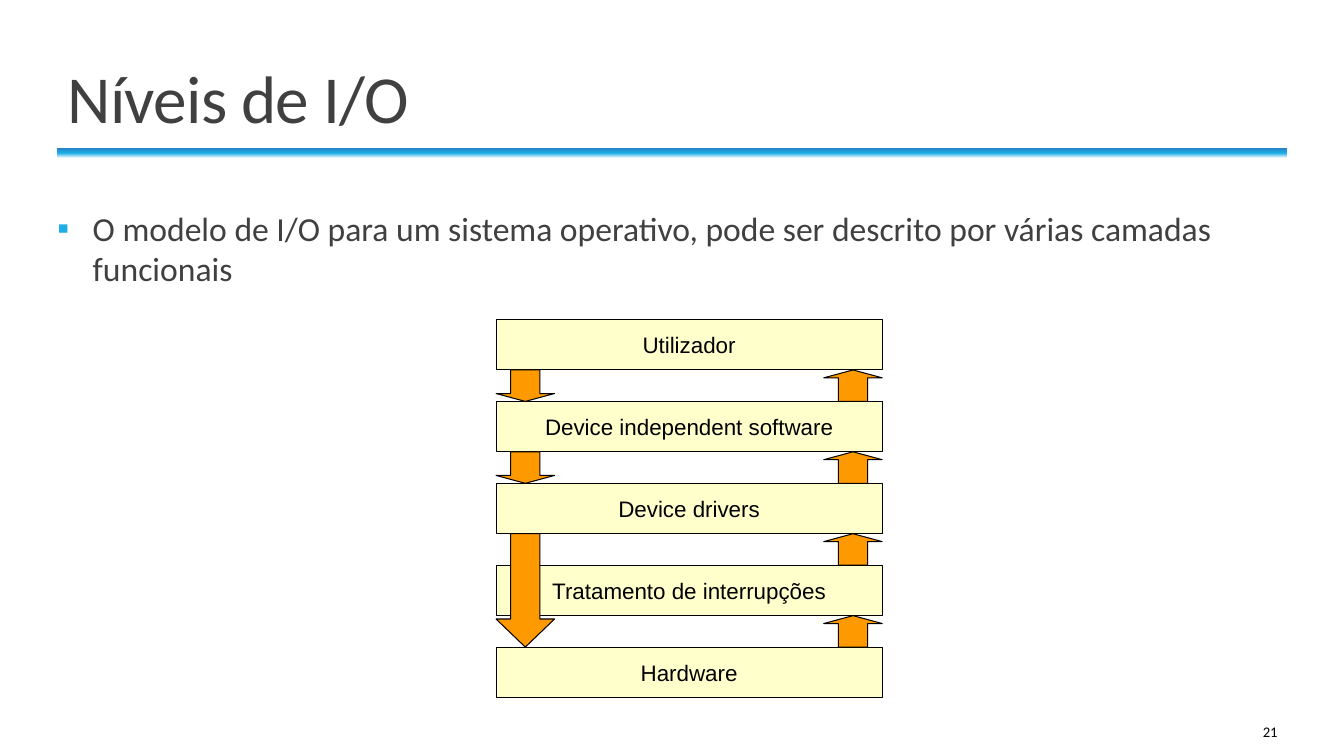
from lxml import etree
from pptx import Presentation
from pptx.dml.color import RGBColor
from pptx.enum.shapes import MSO_SHAPE
from pptx.enum.text import MSO_ANCHOR, PP_ALIGN
from pptx.oxml import parse_xml
from pptx.oxml.ns import nsdecls, qn
from pptx.util import Inches, Pt

RECTANGLE, DOWN_ARROW = MSO_SHAPE.RECTANGLE, MSO_SHAPE.DOWN_ARROW
TOP, MIDDLE, BOTTOM = MSO_ANCHOR.TOP, MSO_ANCHOR.MIDDLE, MSO_ANCHOR.BOTTOM
LEFT, CENTER, RIGHT = PP_ALIGN.LEFT, PP_ALIGN.CENTER, PP_ALIGN.RIGHT

COLORS = {
    "text": "404040",
    "black": "000000",
    "layer": "FFFFCC",
    "arrow": "FF9900",
    "bullet": "1CADE4",
}
RULE_STOPS = ((0, "FFFFFF"), (50, "1CADE4"), (100, "2683C6"))

# Page grid
SLIDE_WIDTH, SLIDE_HEIGHT = 13.33, 7.5
MARGIN = 0.57
CONTENT_WIDTH = 12.2

# Layer stack: one row per layer, arrows in the gaps
LAYERS = (
    "Utilizador",
    "Device independent software",
    "Device drivers",
    "Tratamento de interrupções",
    "Hardware",
)
STACK_LEFT, STACK_TOP, STACK_WIDTH = 4.92, 3.17, 3.83
LAYER_HEIGHT, ROW_PITCH = 0.5, 0.8125
ARROW_WIDTH = 0.58


def color(name):
    return RGBColor.from_string(COLORS[name])


def row_top(row):
    return STACK_TOP + row * ROW_PITCH


def write(paragraph, text, size, font, color_name):
    run = paragraph.add_run()
    run.text = text
    run.font.size = Pt(size)
    run.font.name = font
    run.font.color.rgb = color(color_name)
    return run


def add_text(slide, box, text, size, color_name, anchor=TOP, align=LEFT):
    shape = slide.shapes.add_textbox(*map(Inches, box))
    frame = shape.text_frame
    frame.word_wrap = True
    frame.vertical_anchor = anchor
    paragraph = frame.paragraphs[0]
    paragraph.alignment = align
    run = write(paragraph, text, size, "Calibri", color_name)
    return frame, paragraph, run


def add_block(slide, kind, box, fill_name):
    shape = slide.shapes.add_shape(kind, *map(Inches, box))
    shape.shadow.inherit = False
    shape.fill.solid()
    shape.fill.fore_color.rgb = color(fill_name)
    shape.line.color.rgb = color("black")
    shape.line.width = Pt(0.75)
    return shape


def add_rule(slide):
    box = (MARGIN, 1.47, CONTENT_WIDTH, 0.1)
    shape = slide.shapes.add_shape(RECTANGLE, *map(Inches, box))
    shape.shadow.inherit = False
    shape.line.fill.background()
    stops = "".join(
        f'<a:gs pos="{position * 1000}"><a:srgbClr val="{value}"/></a:gs>'
        for position, value in RULE_STOPS
    )
    gradient = parse_xml(
        f'<a:gradFill {nsdecls("a")}><a:gsLst>{stops}</a:gsLst>'
        '<a:lin ang="16200000" scaled="0"/></a:gradFill>'
    )
    shape._element.spPr.find(qn("a:prstGeom")).addnext(gradient)


def add_title(slide, text):
    box = (MARGIN, 0.29, CONTENT_WIDTH, 1.12)
    _, paragraph, run = add_text(slide, box, text, 48, "text", BOTTOM)
    paragraph.line_spacing = 0.85
    run.font._element.set("spc", "-50")


def add_bullet(slide, text):
    box = (MARGIN, 2.01, CONTENT_WIDTH, 4.82)
    frame, paragraph, _ = add_text(slide, box, text, 24, "text")
    frame.margin_left = frame.margin_right = 0
    paragraph.space_before, paragraph.space_after = Pt(12), Pt(2)
    properties = paragraph._p.get_or_add_pPr()
    properties.set("marL", str(Inches(0.35)))
    properties.set("indent", str(Inches(-0.35)))
    bullet_color = etree.SubElement(properties, qn("a:buClr"))
    etree.SubElement(bullet_color, qn("a:srgbClr"), val=COLORS["bullet"])
    etree.SubElement(properties, qn("a:buFont"), typeface="Arial")
    etree.SubElement(properties, qn("a:buChar"), char="▪")


def add_layer(slide, row, label):
    box = (STACK_LEFT, row_top(row), STACK_WIDTH, LAYER_HEIGHT)
    frame = add_block(slide, RECTANGLE, box, "layer").text_frame
    frame.word_wrap = False
    frame.vertical_anchor = MIDDLE
    paragraph = frame.paragraphs[0]
    paragraph.alignment = CENTER
    write(paragraph, label, 16, "Arial", "black")


def add_arrow(slide, upper_row, lower_row, upward=False, head=0.25):
    left = STACK_LEFT + (STACK_WIDTH - ARROW_WIDTH if upward else 0)
    top = row_top(upper_row) + LAYER_HEIGHT
    box = (left, top, ARROW_WIDTH, row_top(lower_row) - top)
    arrow = add_block(slide, DOWN_ARROW, box, "arrow")
    arrow.adjustments[0] = 0.5
    arrow.adjustments[1] = head
    arrow.rotation = 180 if upward else 0


def main():
    presentation = Presentation()
    presentation.slide_width = Inches(SLIDE_WIDTH)
    presentation.slide_height = Inches(SLIDE_HEIGHT)
    slide = presentation.slides.add_slide(presentation.slide_layouts[6])

    # Heading, page number and statement
    add_rule(slide)
    add_text(slide, (10.83, 7.06, 1.94, 0.4), "21", 10.5, "black", MIDDLE, RIGHT)
    add_title(slide, "Níveis de I/O")
    add_bullet(
        slide,
        "O modelo de I/O para um sistema operativo, pode ser descrito "
        "por várias camadas funcionais",
    )

    # Layers
    for row, label in enumerate(LAYERS):
        add_layer(slide, row, label)

    # Requests go down, the last one past the interrupt layer
    add_arrow(slide, 0, 1)
    add_arrow(slide, 1, 2)
    add_arrow(slide, 2, 4, head=0.48)

    # Replies go up through every layer
    for row in range(len(LAYERS) - 1):
        add_arrow(slide, row, row + 1, upward=True)

    presentation.save("out.pptx")


if __name__ == "__main__":
    main()
